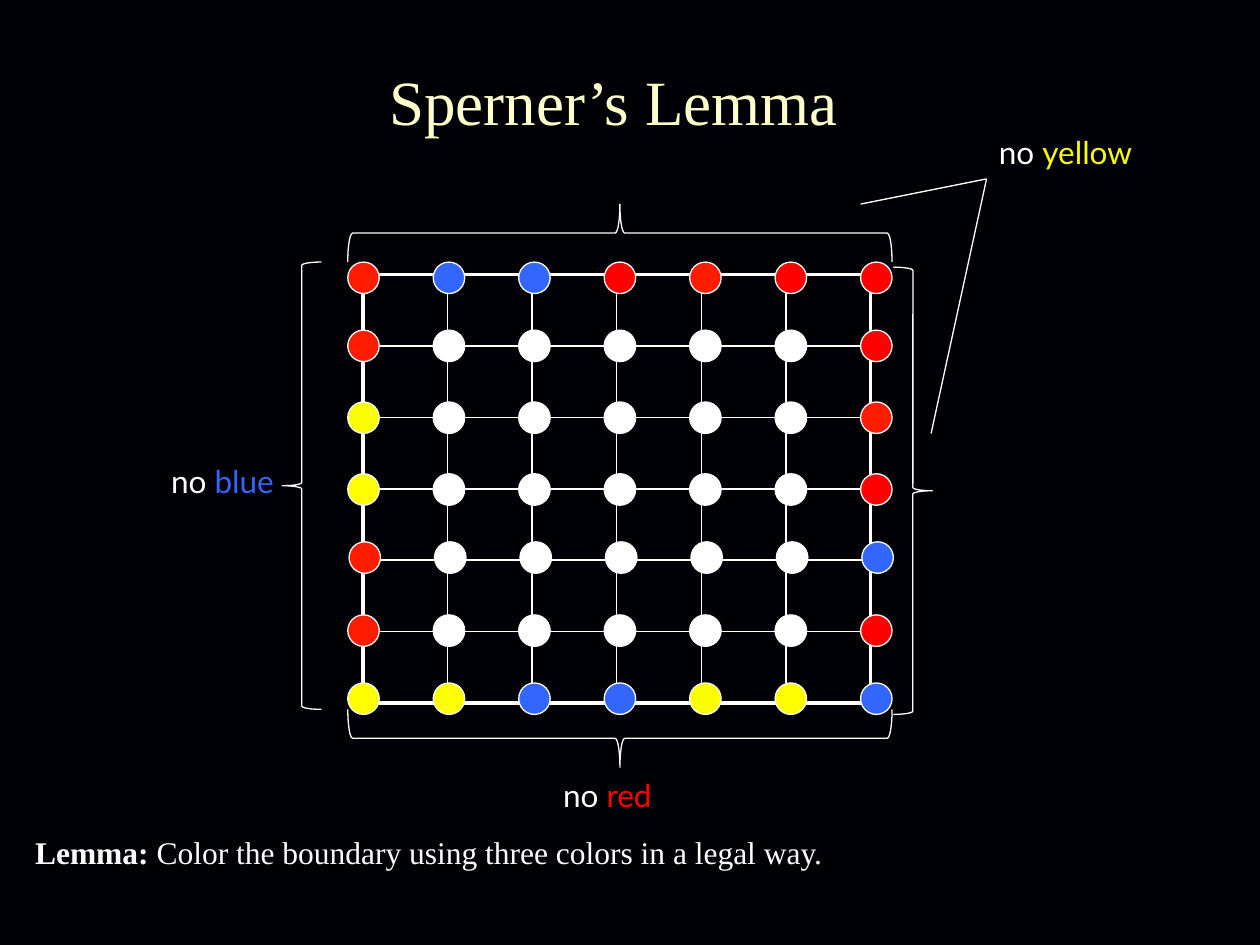
from lxml.etree import SubElement
from pptx import Presentation
from pptx.dml.color import RGBColor
from pptx.enum.shapes import MSO_CONNECTOR, MSO_SHAPE
from pptx.enum.text import MSO_ANCHOR, MSO_AUTO_SIZE, PP_ALIGN
from pptx.oxml import parse_xml
from pptx.oxml.ns import nsdecls, qn
from pptx.util import Inches, Pt

# Content
COLORS = {"back": "010006", "cream": "FFFFCC", "white": "FFFFFF",
          "red": "FF0000", "flame": "FF1C00", "blue": "3366FF",
          "yellow": "FFFF00", "lemon": "F9FF00"}
TITLE = "Sperner’s Lemma"
KEYS = {"R": "red", "F": "flame", "B": "blue",
        "Y": "yellow", "L": "lemon", "w": "white"}
DOTS = ["FBBRFRR",
        "FwwwwwR",
        "LwwwwwF",
        "YwwwwwR",
        "FwwwwwB",
        "FwwwwwR",
        "YYBBLYB"]
# Left edge and top of each row of dots
ROWS = [(2.76, 2.08), (2.76, 2.62), (2.76, 3.19), (2.76, 3.76),
        (2.77, 4.3), (2.76, 4.88), (2.76, 5.42)]
DOT, SPAN = 0.25, 4.07
GRID = (2.88, 2.18, 4.03, 3.4)
CELLS = 6
BRACES = [(MSO_SHAPE.RIGHT_BRACE, (4.69, 3.7, 0.46, 4.32), 90),
          (MSO_SHAPE.RIGHT_BRACE, (4.69, -0.31, 0.46, 4.32), 270),
          (MSO_SHAPE.LEFT_BRACE, (2.24, 2.08, 0.31, 3.55), 0),
          (MSO_SHAPE.RIGHT_BRACE, (7.09, 2.12, 0.31, 3.55), 0)]
TIP = (7.83, 1.42)
LINES = [(6.83, 1.62), (7.39, 3.44)]
SANS, SERIF = "Lato", "Times New Roman"
# Box, wrap, font, then runs of words, color and bold
NOTES = [
    ((4.37, 6.11, 0.92, 0.4), False, SANS,
     [("no ", "white", False), ("red", "red", False)]),
    ((1.26, 3.62, 1.03, 0.4), False, SANS,
     [("no ", "white", False), ("blue", "blue", False)]),
    ((7.83, 1.01, 1.26, 0.4), False, SANS,
     [("no ", "white", False), ("yellow", "lemon", False)]),
    ((0.18, 6.56, 9.49, 0.4), True, SERIF,
     [("Lemma:", "white", True),
      (" Color the boundary using three colors in a legal way.",
       "white", False)]),
]


def rgb(name):
    return RGBColor.from_string(COLORS[name])


def place(box):
    return [Inches(n) for n in box]


def apply(item, values):
    for name, value in values.items():
        setattr(item, name, value)


def write(para, words, color, face, size, bold=False):
    run = para.add_run()
    run.text = words
    apply(run.font, {"name": face, "size": Pt(size), "bold": bold})
    run.font.color.rgb = rgb(color)


def outline(item):
    item.line.color.rgb = rgb("white")
    item.line.width = Pt(0.75)


def add_shape(slide, kind, box, fill=None, turn=0):
    shape = slide.shapes.add_shape(kind, *place(box))
    shape.shadow.inherit = False
    shape.rotation = turn
    if fill:
        shape.fill.solid()
        shape.fill.fore_color.rgb = rgb(fill)
    else:
        shape.fill.background()
    outline(shape)


def add_grid(slide):
    table = slide.shapes.add_table(CELLS, CELLS, *place(GRID)).table
    apply(table, {"first_row": False, "horz_banding": False})
    last = CELLS - 1
    for row in range(CELLS):
        for col in range(CELLS):
            cell = table.cell(row, col)
            cell.fill.background()
            props = cell._tc.get_or_add_tcPr()
            # Thick border only on the outer edges
            edges = {"L": col == 0, "R": col == last,
                     "T": row == 0, "B": row == last}
            for spot, (side, outer) in enumerate(edges.items()):
                width = Pt(2.25 if outer else 1)
                props.insert(spot, parse_xml(
                    f'<a:ln{side} {nsdecls("a")} w="{width}"><a:solidFill>'
                    f'<a:srgbClr val="{COLORS["white"]}"/>'
                    f'</a:solidFill></a:ln{side}>'))


def main():
    deck = Presentation()
    apply(deck, {"slide_width": Inches(10), "slide_height": Inches(7.5)})
    slide = deck.slides.add_slide(deck.slide_layouts[5])
    slide.background.fill.solid()
    slide.background.fill.fore_color.rgb = rgb("back")

    # Title
    title = slide.shapes.title
    apply(title, dict(zip(("left", "top", "width", "height"),
                          place((0.08, 0.17, 9.58, 1.25)))))
    title.text_frame.vertical_anchor = MSO_ANCHOR.MIDDLE
    para = title.text_frame.paragraphs[0]
    para.alignment = PP_ALIGN.CENTER
    write(para, TITLE, "cream", SERIF, 36)

    # Grid and dots
    add_grid(slide)
    for (left, top), keys in zip(ROWS, DOTS):
        step = SPAN / (len(keys) - 1)
        for col, key in enumerate(keys):
            add_shape(slide, MSO_SHAPE.OVAL,
                      (left + col * step, top, DOT, DOT), KEYS[key])

    # Braces and pointer lines
    for kind, box, turn in BRACES:
        add_shape(slide, kind, box, turn=turn)
    for start in LINES:
        line = slide.shapes.add_connector(
            MSO_CONNECTOR.STRAIGHT, *place(start + TIP))
        outline(line)
        SubElement(line._element.spPr, qn("a:effectLst"))

    # Labels and lemma
    for box, wrap, face, runs in NOTES:
        frame = slide.shapes.add_textbox(*place(box)).text_frame
        apply(frame, {"word_wrap": wrap,
                      "auto_size": MSO_AUTO_SIZE.SHAPE_TO_FIT_TEXT})
        for words, color, bold in runs:
            write(frame.paragraphs[0], words, color, face, 18, bold)

    deck.save("out.pptx")


if __name__ == "__main__":
    main()
